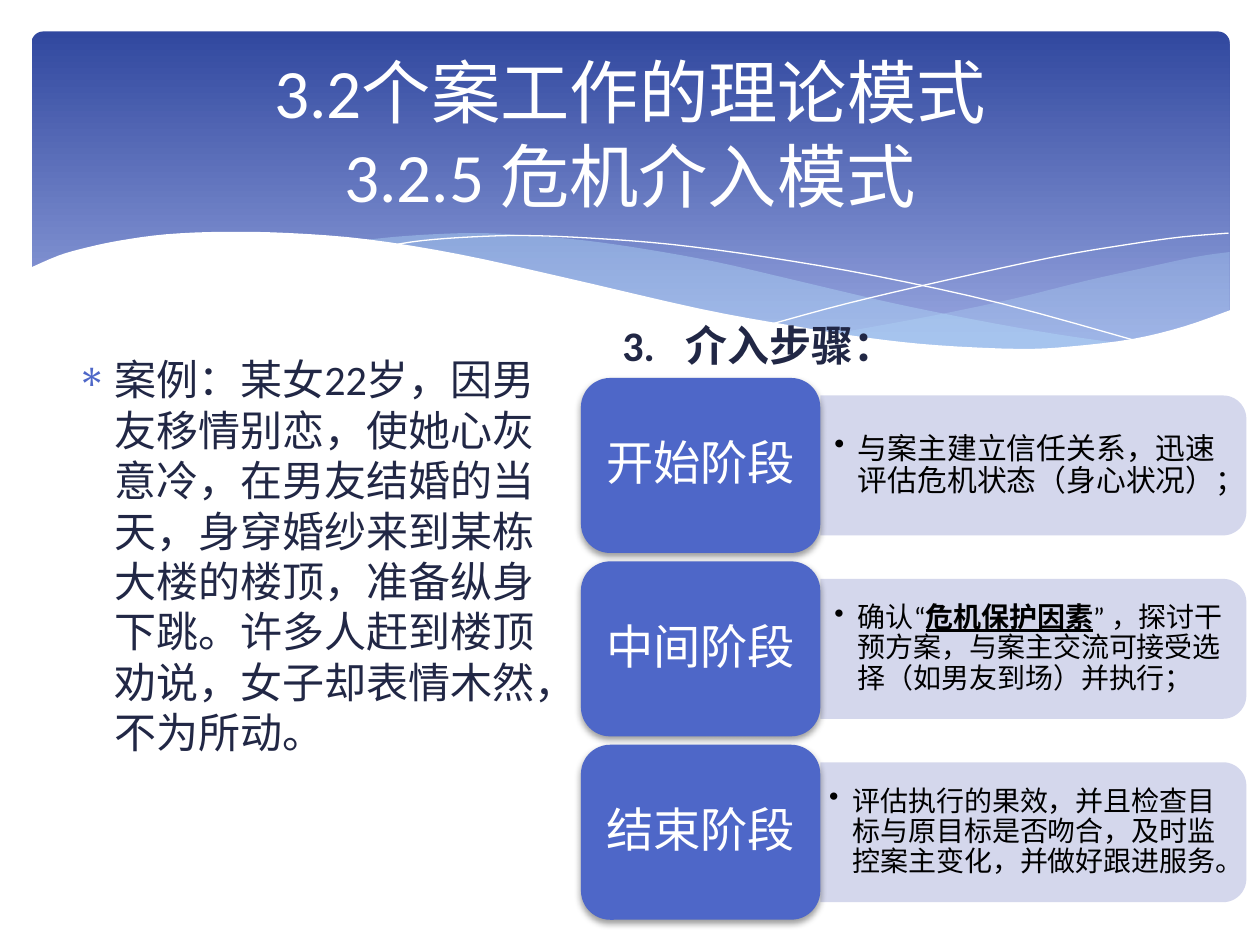
from dataclasses import dataclass

from lxml.etree import SubElement
from pptx import Presentation
from pptx.dml.color import RGBColor
from pptx.enum.shapes import MSO_SHAPE as Preset
from pptx.enum.text import MSO_ANCHOR as Anchor, PP_ALIGN as Align
from pptx.oxml.ns import qn
from pptx.util import Pt


@dataclass(frozen=True)
class Theme:
    font: str = "Calibri"
    white: str = "FFFFFF"
    black: str = "000000"
    ink: str = "212745"
    accent: str = "4E67C8"
    panel: str = "D0D3EB"
    banner_top: str = "31489F"
    banner_bottom: str = "95A4DE"
    wave: str = "B4DCFA"
    title_size: float = 39.6
    stage_size: float = 27
    body_size: float = 24


THEME = Theme()

TITLE = "3.2个案工作的理论模式\v3.2.5 危机介入模式"
STORY = ("案例：某女22岁，因男友移情别恋，使她心灰意冷，在男友结婚的当天，身穿婚纱来到某栋大楼的楼顶，"
         "准备纵身下跳。许多人赶到楼顶劝说，女子却表情木然，不为所动。")
HEADING = "介入步骤："
STAGES = [
    ("开始阶段", ["与案主建立信任关系，迅速评估危机状态（身心状况）；"], 17, (8, 4)),
    ("中间阶段", ["确认“", "危机保护因素", "” ，探讨干预方案，与案主交流可接受选择（如男友到场）并执行；"], 16, (8, 4)),
    ("结束阶段", ["评估执行的果效，并且检查目标与原目标是否吻合，及时监控案主变化，并做好跟进服务。"], 16, (5, 2)),
]

SWELL = [
    [(702.7, 144), (682.6, 146.9), (652.3, 153.4), (619.9, 160.6), (579.6, 170.6),
     (542.2, 178.6), (508.3, 185), (475.9, 190.8)],
    [(475.9, 190.8), (497.5, 193.7), (527, 197.3), (553.7, 199.4), (578.2, 200.2),
     (607.7, 199.4), (634.3, 196.6), (657.4, 192.2), (678.2, 186.5), (702.7, 177.8)],
]
BAND = [
    [(643, 196.6), (602.6, 190.8), (558, 182.9), (508.3, 172.8), (452.9, 159.8),
     (409.7, 149.8), (370.1, 142.6), (334.8, 137.5), (302.4, 134.6), (273.6, 133.2),
     (247.7, 133.9), (225.4, 135.4), (205.9, 137.5)],
    [(205.9, 137.5), (232.6, 141.1), (260.6, 146.2), (290.9, 151.9), (323.3, 159.8),
     (381.6, 172.8), (432.7, 183.6), (478.8, 191.5), (519.8, 197.3), (556.6, 199.4),
     (589, 200.2), (617, 199.4), (643, 196.6)],
]
FALLING_LINE = [[(222.5, 140.4), (241.2, 137.5), (269.3, 135.4), (299.5, 134.6), (337.7, 136.1),
                 (383.8, 139.7), (437.8, 146.9), (500.4, 157.7), (572.4, 173.5), (653, 195.8)]]
RISING_LINE = [[(441.4, 185), (483.8, 173.5), (538.6, 160.6), (601.9, 146.9),
                (644.4, 139.7), (675.4, 135.4), (702, 133.2)]]
PAPER = [
    [(703.4, 177.1), (676.8, 186.5), (647.3, 193.7), (612, 198), (582.5, 199.4), (535.7, 197.3),
     (495.4, 193), (450.7, 185.8), (399.6, 176.4), (321.8, 158.4), (262.8, 145.4),
     (210.2, 136.8), (165.6, 133.2), (127.4, 132.5), (95, 133.9), (68.4, 137.5),
     (48.2, 141.8), (33.1, 146.2), (16.6, 153.4)],
    [(16.6, 236.9), (703.4, 236.9)],
]
WAVES = [
    (SWELL, THEME.wave, 29),
    (BAND, THEME.wave, 40),
    (FALLING_LINE, None, 100),
    (RISING_LINE, None, 100),
    (PAPER, THEME.white, 100),
]

STAGE_LEFT, STAGE_TOP, STAGE_WIDTH, STAGE_HEIGHT, STAGE_PITCH = 332, 216, 136.8, 100, 104.8
PANEL_WIDTH, PANEL_HEIGHT = 243.4, 80
PANEL_TEXT_WIDTH, PANEL_TEXT_HEIGHT, LABEL_INSET = 239, 72, 4.9


def box(*lengths):
    return [Pt(length) for length in lengths]


def smooth(knots, steps=4):
    if len(knots) < 3:
        return knots
    padded = [knots[0], *knots, knots[-1]]
    curve = [knots[0]]
    for a, b, c, d in zip(padded, padded[1:], padded[2:], padded[3:]):
        for step in range(1, steps + 1):
            t = step / steps
            curve.append(tuple(
                (2 * q + (r - p) * t + (2 * p - 5 * q + 4 * r - s) * t ** 2
                 + (3 * q - p - 3 * r + s) * t ** 3) / 2
                for p, q, r, s in zip(a, b, c, d)))
    return curve


def paint(shape, color, opacity=100):
    shape.shadow.inherit = False
    shape.line.fill.background()
    shape.fill.solid()
    shape.fill.fore_color.rgb = RGBColor.from_string(color)
    if opacity < 100:
        node = shape.fill._xPr.find(qn("a:solidFill"))[0]
        SubElement(node, qn("a:alpha"), val=str(opacity * 1000))


def add_wave(slide, edges, color, opacity):
    points = [box(*point) for edge in edges for point in smooth(edge)]
    builder = slide.shapes.build_freeform(*points[0], scale=1.0)
    builder.add_line_segments(points[1:], close=color is not None)
    shape = builder.convert_to_shape()
    if color:
        paint(shape, color, opacity)
    else:
        shape.shadow.inherit = False
        shape.fill.background()
        shape.line.color.rgb = RGBColor.from_string(THEME.white)
        shape.line.width = Pt(0)


def add_text(slide, place, pieces, size, color, align=Align.LEFT, anchor=Anchor.TOP,
             inset=(7.2, 3.6), spacing=None):
    frame = slide.shapes.add_textbox(*box(*place)).text_frame
    frame.word_wrap = True
    frame.vertical_anchor = anchor
    frame.margin_left = frame.margin_right = Pt(inset[0])
    frame.margin_top = frame.margin_bottom = Pt(inset[1])
    paragraph = frame.paragraphs[0]
    paragraph.text = pieces[0]
    for piece in pieces[1:]:
        paragraph.add_run().text = piece
    paragraph.alignment = align
    if spacing:
        paragraph.line_spacing = spacing
    for run in paragraph.runs:
        run.font.size = Pt(size)
        run.font.name = THEME.font
        run.font.color.rgb = RGBColor.from_string(color)
        SubElement(run.font._element, qn("a:ea"), typeface=THEME.font)
    return paragraph


def add_bullet(paragraph, indent, kind, color=None, **settings):
    properties = paragraph._p.get_or_add_pPr()
    properties.set("marL", str(Pt(indent)))
    properties.set("indent", str(-Pt(indent)))
    if color:
        SubElement(SubElement(properties, qn("a:buClr")), qn("a:srgbClr"), val=color)
    SubElement(properties, qn(kind), **settings)


def add_shadow(shape):
    effects = shape._element.spPr.find(qn("a:effectLst"))
    shadow = SubElement(effects, qn("a:outerShdw"), blurRad=str(Pt(4)), dist=str(Pt(2)),
                        dir="5400000", rotWithShape="0")
    color = SubElement(shadow, qn("a:srgbClr"), val=THEME.black)
    SubElement(color, qn("a:alpha"), val="38000")


def add_stage(slide, index, label, pieces, size, inset):
    top = STAGE_TOP + index * STAGE_PITCH
    middle = top + STAGE_HEIGHT / 2
    right = STAGE_LEFT + STAGE_WIDTH
    panel = slide.shapes.add_shape(Preset.ROUND_2_SAME_RECTANGLE, *box(
        right + (PANEL_WIDTH - PANEL_HEIGHT) / 2, middle - PANEL_WIDTH / 2, PANEL_HEIGHT, PANEL_WIDTH))
    panel.rotation = 90
    paint(panel, THEME.panel, 90)
    detail = add_text(slide, (right, middle - PANEL_TEXT_HEIGHT / 2, PANEL_TEXT_WIDTH, PANEL_TEXT_HEIGHT),
                      pieces, size, THEME.black, anchor=Anchor.MIDDLE, inset=inset, spacing=0.9)
    add_bullet(detail, 13.5, "a:buChar", char="•")
    for run in detail.runs[1:2]:
        run.font.bold = run.font.underline = True
    block = slide.shapes.add_shape(
        Preset.ROUNDED_RECTANGLE, *box(STAGE_LEFT, top, STAGE_WIDTH, STAGE_HEIGHT))
    paint(block, THEME.accent)
    add_shadow(block)
    add_text(slide, (STAGE_LEFT + LABEL_INSET, top + LABEL_INSET,
                     STAGE_WIDTH - 2 * LABEL_INSET, STAGE_HEIGHT - 2 * LABEL_INSET),
             [label], THEME.stage_size, THEME.white, Align.CENTER, Anchor.MIDDLE, (8, 4), 0.9)


def add_banner(slide):
    banner = slide.shapes.add_shape(Preset.ROUNDED_RECTANGLE, *box(18, 18, 684.7, 194.4))
    banner.adjustments[0] = 0.034
    banner.shadow.inherit = False
    banner.line.fill.background()
    banner.fill.gradient()
    banner.fill.gradient_angle = 270
    stops = zip(banner.fill.gradient_stops, (0, 0.9), (THEME.banner_top, THEME.banner_bottom))
    for stop, position, color in stops:
        stop.position = position
        stop.color.rgb = RGBColor.from_string(color)


def main():
    presentation = Presentation()
    presentation.slide_width, presentation.slide_height = box(720, 540)
    slide = presentation.slides.add_slide(presentation.slide_layouts[6])
    add_banner(slide)
    for wave in WAVES:
        add_wave(slide, *wave)
    heading = add_text(slide, (348.5, 179.3, 170, 36), [HEADING], THEME.body_size, THEME.ink)
    heading.runs[0].font.bold = True
    add_bullet(heading, 36, "a:buAutoNum", type="arabicPeriod", startAt="3")
    for index, stage in enumerate(STAGES):
        add_stage(slide, index, *stage)
    story = add_text(slide, (36.7, 198.7, 291.6, 271.4), [STORY], THEME.body_size, THEME.ink)
    add_bullet(story, 21.6, "a:buChar", THEME.accent, char="∗")
    add_text(slide, (36, 26.6, 648, 98.6), [TITLE], THEME.title_size, THEME.white,
             Align.CENTER, Anchor.MIDDLE)
    presentation.save("out.pptx")


if __name__ == "__main__":
    main()
